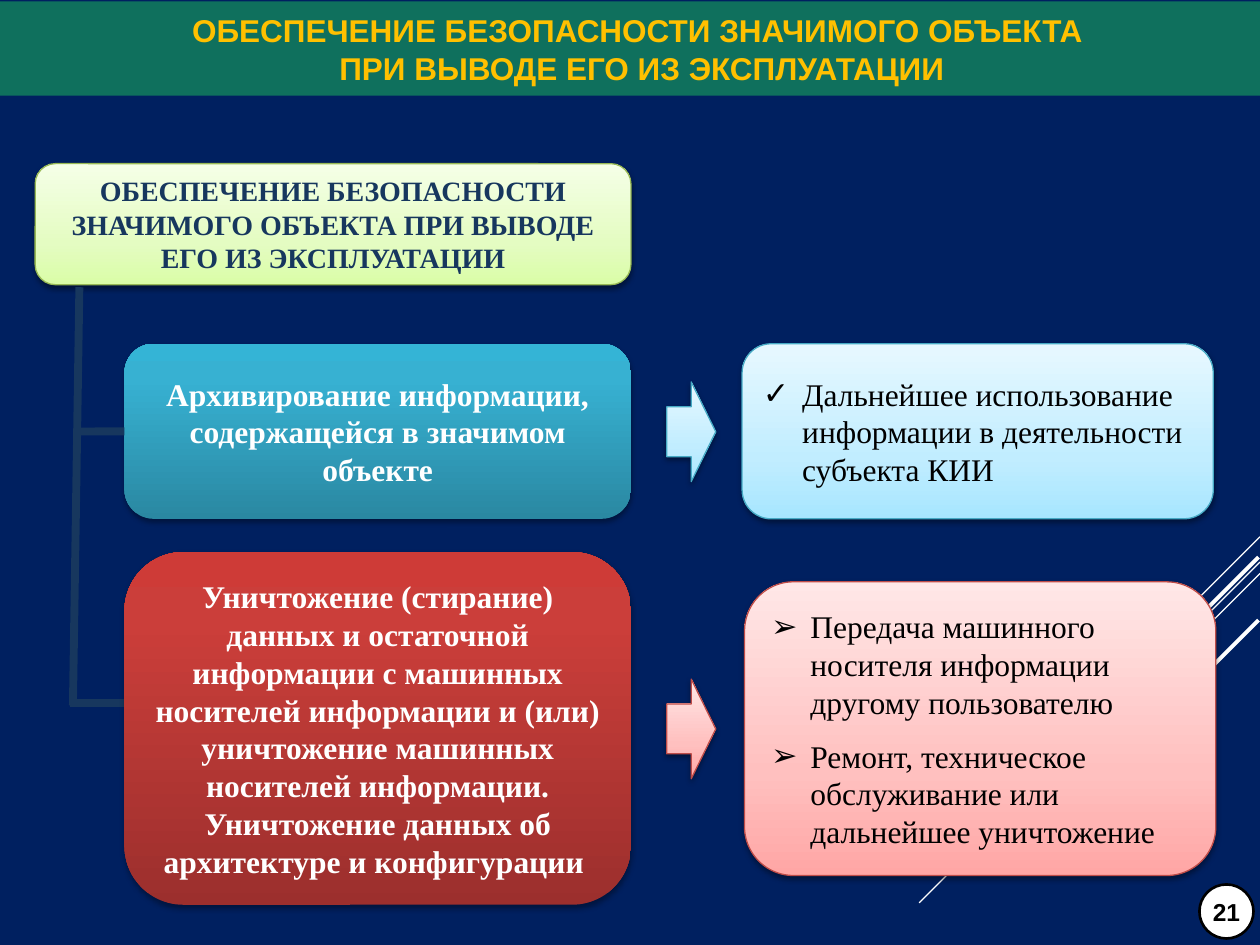
from lxml import etree
from pptx import Presentation
from pptx.dml.color import RGBColor
from pptx.enum.shapes import MSO_CONNECTOR, MSO_SHAPE
from pptx.enum.text import MSO_ANCHOR, PP_ALIGN
from pptx.oxml.ns import qn
from pptx.util import Cm, Pt

LINE = MSO_CONNECTOR.STRAIGHT
ROUND = MSO_SHAPE.ROUNDED_RECTANGLE
ARROW = MSO_SHAPE.RIGHT_ARROW
BADGE = MSO_SHAPE.STAR_16_POINT
MIDDLE = MSO_ANCHOR.MIDDLE
CENTER = PP_ALIGN.CENTER
LEFT = PP_ALIGN.LEFT

HEX = {
    "back": "002060", "band": "0F705D", "gold": "FFC000", "navy": "17375E",
    "white": "FFFFFF", "black": "000000",
    "lime": "98B955", "sky": "46AAC5", "rose": "BF4C48",
}
SOFT = (0, 35, 100)
DEEP = (0, 80, 100)
FADES = {
    "lime": (SOFT, ("DAFDA7", "E4FCC2", "F5FFE7")),
    "sky": (SOFT, ("A7E6FF", "C1EDFF", "E7F8FF")),
    "rose": (SOFT, ("FFA6A5", "FFC0BF", "FFE7E7")),
    "blue": (DEEP, ("2A88A2", "37B1D2", "34B4D6")),
    "red": (DEEP, ("9C2F2D", "CB3E3A", "CE3B37")),
}
RAYS = [
    (25.4, 10.82, 2.11, 0.75), (25.4, 11.33, 6.87, 0.75),
    (25.4, 11.56, 4.37, 0.75), (25.37, 11.23, 3.99, 2.25),
    (25.37, 12.5, 2.9, 2.25),
]


def rgb(name):
    """Return the colour stored under a name."""
    return RGBColor.from_string(HEX[name])


def add_tag(node, tag, **attrs):
    """Append a drawing element with attributes."""
    return etree.SubElement(node, qn(tag), {k: str(v) for k, v in attrs.items()})


def fade(shape, name):
    """Fill a shape with a three-stop vertical gradient."""
    shape.fill.gradient()
    shape.fill.gradient_angle = 90
    stops = shape._element.spPr.find(".//" + qn("a:gsLst"))
    for stop in list(stops):
        stops.remove(stop)
    for place, tone in zip(*FADES[name]):
        stop = add_tag(stops, "a:gs", pos=place * 1000)
        add_tag(stop, "a:srgbClr", val=tone)


def shade(shape, alpha, dist):
    """Give a shape a soft shadow straight below it."""
    shape.shadow.inherit = False
    effects = shape._element.spPr.find(qn("a:effectLst"))
    outer = add_tag(effects, "a:outerShdw", blurRad=Pt(3.1), dist=Pt(dist),
                    dir=5400000, algn="ctr", rotWithShape=0)
    tone = add_tag(outer, "a:srgbClr", val=HEX["black"])
    add_tag(tone, "a:alpha", val=alpha * 1000)


def add_text(para, text, size, color, font="Times New Roman", bold=True):
    """Add one formatted run to a paragraph."""
    run = para.add_run()
    run.text = text
    run.font.name, run.font.size, run.font.bold = font, Pt(size), bold
    run.font.color.rgb = rgb(color)


def add_paras(shape, texts, size, color, mark=None):
    """Write centred paragraphs, or a list when a mark is given."""
    frame = shape.text_frame
    frame.word_wrap = True
    frame.vertical_anchor = MIDDLE
    for i, text in enumerate(texts):
        para = frame.add_paragraph() if i else frame.paragraphs[0]
        para.alignment = LEFT if mark else CENTER
        if mark:
            props = para._p.get_or_add_pPr()
            props.set("marL", str(Cm(0.79)))
            props.set("indent", str(-Cm(0.79)))
            if i:
                para.space_before = Pt(9)
            add_tag(props, "a:buFont", typeface="Arial")
            add_tag(props, "a:buChar", char=mark)
        add_text(para, text, size, color, bold=not mark)


def add_form(slide, kind, box, tone):
    """Add a shaded gradient shape, outlined when its tone has a line."""
    shape = slide.shapes.add_shape(kind, *map(Cm, box))
    fade(shape, tone)
    if tone in HEX:
        shape.line.color.rgb = rgb(tone)
        shape.line.width = Pt(0.75)
        shade(shape, 38, 1.6)
    else:
        shape.line.fill.background()
        shade(shape, 35, 1.8)
    return shape


def add_line(slide, ends, color, width):
    """Add a plain straight line."""
    line = slide.shapes.add_connector(LINE, *map(Cm, ends))
    line.line.color.rgb = rgb(color)
    line.line.width = Pt(width)
    add_tag(line._element.spPr, "a:effectLst")
    return line


def set_title(slide, rows):
    """Turn the title placeholder into the top band."""
    title = slide.shapes.title
    title.left, title.top, title.width, title.height = map(Cm, (0, 0.03, 25.4, 1.9))
    title.fill.solid()
    title.fill.fore_color.rgb = rgb("band")
    frame = title.text_frame
    frame.vertical_anchor = MIDDLE
    frame.margin_left = frame.margin_right = Cm(0.13)
    frame.margin_top = frame.margin_bottom = Cm(0.13)
    para = frame.paragraphs[0]
    para.alignment = CENTER
    para._p.get_or_add_pPr().set("marL", str(Cm(0.48)))
    for i, row in enumerate(rows):
        if i:
            para.add_line_break()
        add_text(para, row, 18, "gold", "Arial")


def add_badge(slide, text):
    """Add the page number badge."""
    badge = slide.shapes.add_shape(BADGE, *map(Cm, (24.18, 17.83, 1.09, 1.09)))
    badge.adjustments[0] = 0.5
    badge.fill.solid()
    badge.fill.fore_color.rgb = rgb("white")
    badge.line.color.rgb = rgb("black")
    badge.line.width = Pt(1.5)
    badge.shadow.inherit = False
    frame = badge.text_frame
    frame.word_wrap = False
    frame.vertical_anchor = MIDDLE
    frame.paragraphs[0].alignment = CENTER
    add_text(frame.paragraphs[0], text, 14, "black", "Arial")


def main():
    """Build the slide and save it."""
    deck = Presentation()
    deck.slide_width, deck.slide_height = Cm(25.4), Cm(19.05)
    slide = deck.slides.add_slide(deck.slide_layouts[5])
    slide.background.fill.solid()
    slide.background.fill.fore_color.rgb = rgb("back")
    set_title(slide, ["ОБЕСПЕЧЕНИЕ БЕЗОПАСНОСТИ ЗНАЧИМОГО ОБЪЕКТА ",
                      "ПРИ ВЫВОДЕ ЕГО ИЗ ЭКСПЛУАТАЦИИ"])
    for x, y, run, width in RAYS:
        add_line(slide, (x, y, x - run, y + run), "white", width)
    add_badge(slide, "21")

    add_line(slide, (1.42, 14.17, 3.07, 14.17), "navy", 4.5)
    head = add_form(slide, ROUND, (0.71, 3.3, 12.01, 2.44), "lime")
    add_paras(head, ["ОБЕСПЕЧЕНИЕ БЕЗОПАСНОСТИ ЗНАЧИМОГО ОБЪЕКТА "
                     "ПРИ ВЫВОДЕ ЕГО ИЗ ЭКСПЛУАТАЦИИ"], 16, "navy")
    add_line(slide, (1.6, 5.79, 1.47, 14.22), "navy", 4.5)

    store = add_form(slide, ROUND, (2.51, 6.93, 10.21, 3.53), "blue")
    add_paras(store, ["Архивирование информации, содержащейся в значимом объекте"],
              18, "white")
    branch = add_line(slide, (1.5, 8.7, 2.51, 8.7), "navy", 4.5)
    branch.end_connect(store, 1)
    erase = add_form(slide, ROUND, (2.51, 11.13, 10.21, 7.11), "red")
    add_paras(erase, ["Уничтожение (стирание) данных и остаточной информации "
                      "с машинных носителей информации и (или) уничтожение "
                      "машинных носителей информации.",
                      "Уничтожение данных об архитектуре и конфигурации "],
              18, "white")

    reuse = add_form(slide, ROUND, (14.96, 6.93, 9.5, 3.53), "sky")
    add_paras(reuse, ["Дальнейшее использование информации в деятельности "
                      "субъекта КИИ"], 18, "black", "✓")
    pass_on = add_form(slide, ROUND, (15.01, 11.73, 9.5, 5.92), "rose")
    add_paras(pass_on, ["Передача машинного носителя информации другому пользователю",
                        "Ремонт, техническое обслуживание или дальнейшее уничтожение"],
              18, "black", "➢")
    for y, tone in ((7.7, "sky"), (13.69, "rose")):
        add_form(slide, ARROW, (13.44, y, 0.99, 2.01), tone)
    deck.save("out.pptx")


if __name__ == "__main__":
    main()
